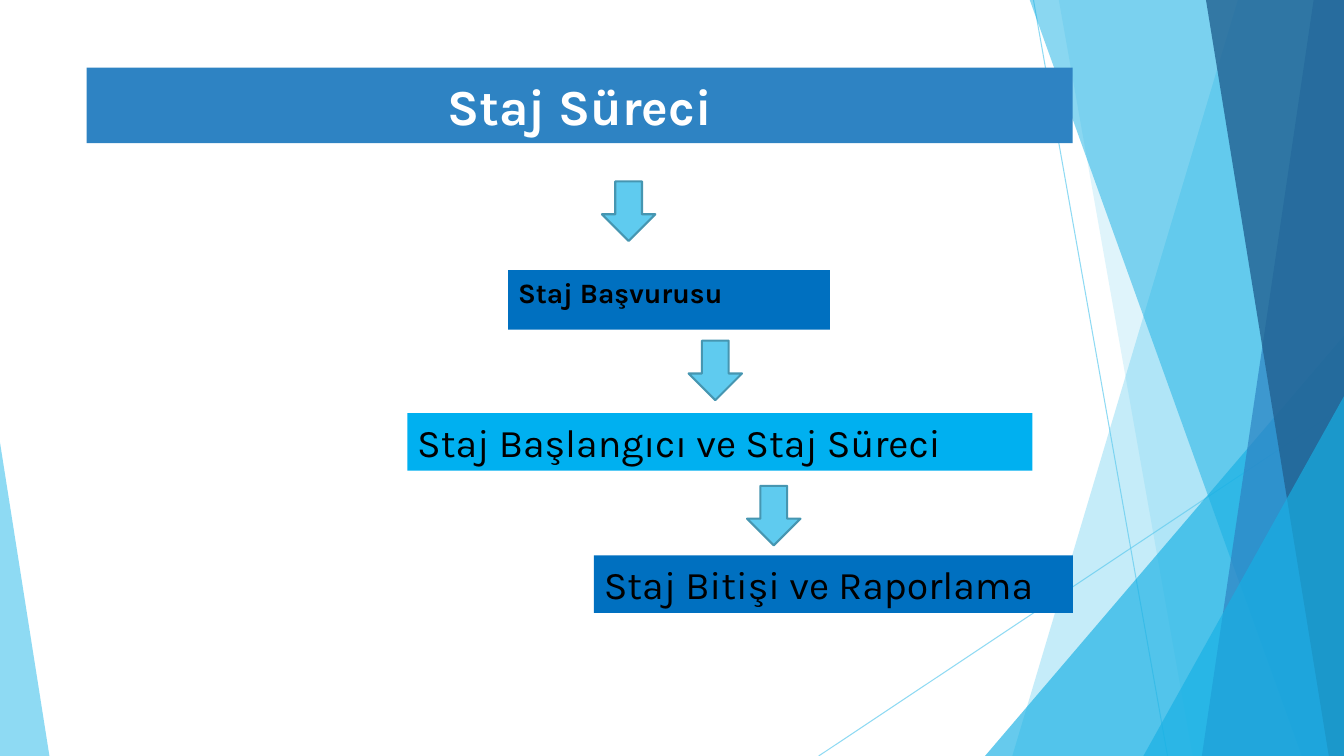
import pptx
import pptx.util
import pptx.dml.color
import pptx.enum.shapes
import pptx.enum.text
import pptx.oxml.ns
import lxml.etree

Inches = pptx.util.Inches
Pt = pptx.util.Pt
Shapes = pptx.enum.shapes.MSO_SHAPE
Align = pptx.enum.text.PP_ALIGN
Anchor = pptx.enum.text.MSO_ANCHOR
qn = pptx.oxml.ns.qn


def rgb(value):
    return pptx.dml.color.RGBColor.from_string(value)


def paint(fill, color, opacity=100):
    fill.solid()
    fill.fore_color.rgb = rgb(color)
    if opacity < 100:
        tint = fill._xPr.find(qn("a:solidFill"))[0]
        lxml.etree.SubElement(tint, qn("a:alpha"), val=str(opacity * 1000))


deck = pptx.Presentation()
deck.slide_width = Inches(13.33)
deck.slide_height = Inches(7.5)
slide = deck.slides.add_slide(deck.slide_layouts[6])
canvas = slide.shapes

for x1, y1, x2, y2 in [(10.25, 0, 11.58, 7.5), (13.33, 4.03, 8.12, 7.5)]:
    ray = canvas.add_connector(
        pptx.enum.shapes.MSO_CONNECTOR.STRAIGHT,
        Inches(x1), Inches(y1), Inches(x2), Inches(y2))
    ray.line.width = Pt(0.75)
    paint(ray.line.fill, "5FCBEF", 70)
    lxml.etree.SubElement(ray._element.spPr, qn("a:effectLst"))

facets = [
    ("band", (12.28, 10.04), "5FCBEF", 36),
    ("band", (10.5, 11.83), "5FCBEF", 20),
    ("corner", (9.77, 3.33, 3.56, 1), "17B0E4", 66),
    ("band", (10.21, 12.91), "17B0E4", 50),
    ("band", (13.03, 11.92), "2E83C3", 70),
    ("band", (11.96, 13.18), "226292", 80),
    ("corner", (11.34, 3.93, 1.99, 1), "17B0E4", 66),
    ("corner", (0, 4.39, 0.49, 0), "5FCBEF", 70),
]
for kind, place, color, opacity in facets:
    if kind == "band":
        top_x, bottom_x = place
        outline = canvas.build_freeform(Inches(top_x), Inches(-0.01))
        outline.add_line_segments(
            [(Inches(x), Inches(y)) for x, y in
             [(13.33, -0.01), (13.33, 7.5), (bottom_x, 7.5)]], close=True)
        facet = outline.convert_to_shape()
    else:
        left, top, width, peak = place
        facet = canvas.add_shape(
            Shapes.ISOSCELES_TRIANGLE,
            Inches(left), Inches(top), Inches(width), Inches(7.5 - top))
        facet.adjustments[0] = peak
    paint(facet.fill, color, opacity)
    facet.line.fill.background()
    facet.shadow.inherit = False

steps = [
    ("Staj Süreci", (0.86, 0.67, 9.78, 0.75), "2E83C3", "FFFFFF",
     {"size": Pt(36), "bold": True},
     {"alignment": Align.CENTER}, Anchor.MIDDLE),
    ("Staj Başvurusu", (5.04, 2.68, 3.19, 0.59), "0070C0", "000000",
     {"size": Pt(20), "bold": True},
     {"alignment": Align.LEFT, "space_before": Pt(10)}, Anchor.TOP),
    ("Staj Başlangıcı ve Staj Süreci", (4.04, 4.1, 6.2, 0.57), "00B0F0", "000000",
     {"size": Pt(28)}, {"alignment": Align.LEFT}, Anchor.TOP),
    ("Staj Bitişi ve Raporlama", (5.89, 5.51, 4.75, 0.57), "0070C0", "000000",
     {"size": Pt(28)}, {"alignment": Align.LEFT}, Anchor.TOP),
]
for wording, box, color, ink, font_format, paragraph_format, anchor in steps:
    step = canvas.add_shape(Shapes.RECTANGLE, *map(Inches, box))
    paint(step.fill, color)
    step.line.fill.background()
    step.shadow.inherit = False
    step.text_frame.word_wrap = True
    step.text_frame.vertical_anchor = anchor
    paragraph = step.text_frame.paragraphs[0]
    for name, value in paragraph_format.items():
        setattr(paragraph, name, value)
    run = paragraph.add_run()
    run.text = wording
    run.font.name = "Karla"
    run.font.color.rgb = rgb(ink)
    for name, value in font_format.items():
        setattr(run.font, name, value)

for left, top in [(5.97, 1.8), (6.83, 3.38), (7.41, 4.82)]:
    arrow = canvas.add_shape(
        Shapes.DOWN_ARROW, Inches(left), Inches(top), Inches(0.53), Inches(0.59))
    paint(arrow.fill, "5FCBEF")
    paint(arrow.line.fill, "4696B1")
    arrow.line.width = Pt(1.5)
    arrow.shadow.inherit = False

deck.save("out.pptx")
